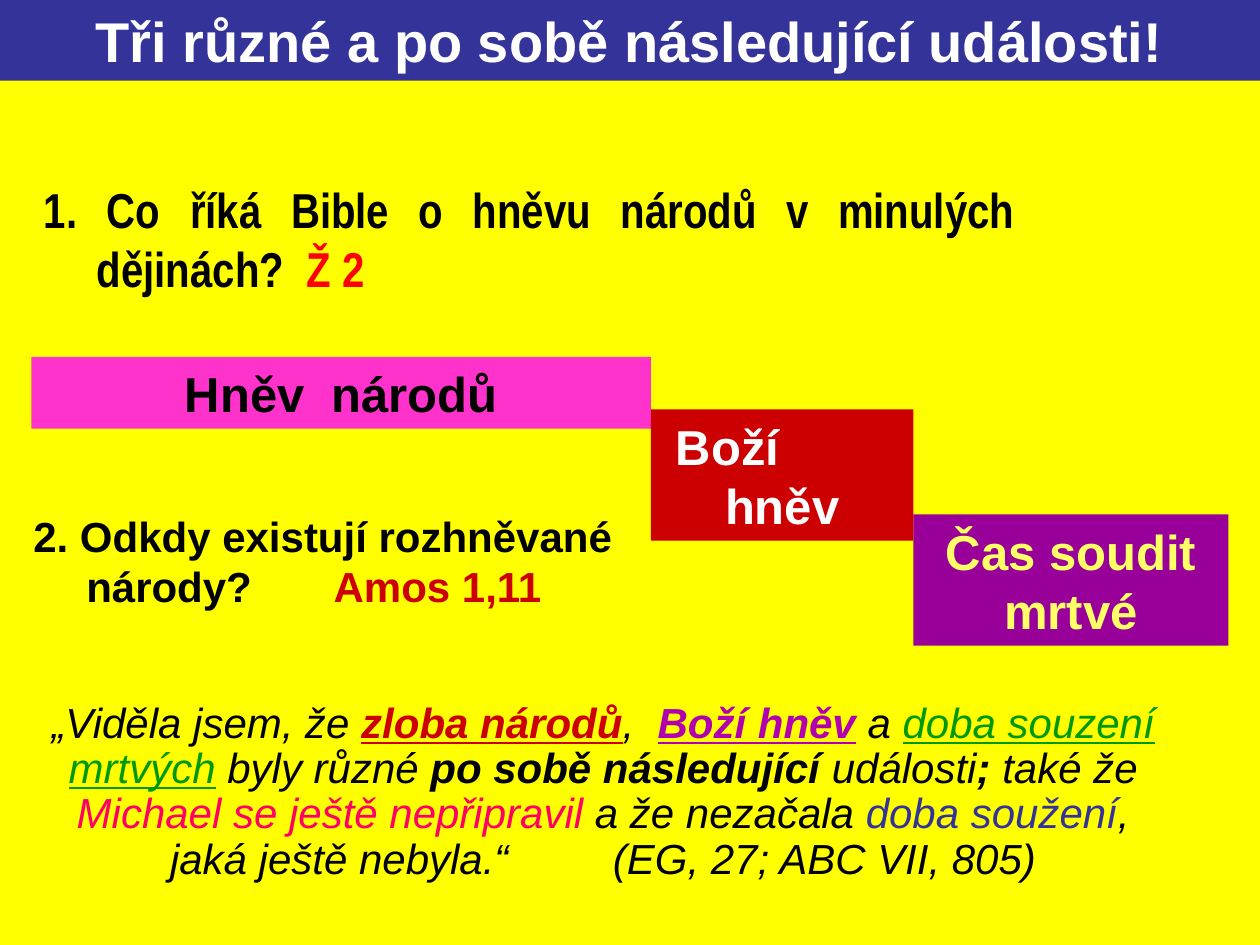
"""Build a slide on three successive events: stepped boxes, two questions and a quotation."""
from pptx import Presentation
from pptx.dml.color import RGBColor
from pptx.enum.shapes import MSO_SHAPE
from pptx.enum.text import MSO_ANCHOR, PP_ALIGN
from pptx.util import Inches, Pt

RECTANGLE = MSO_SHAPE.RECTANGLE
TOP, MIDDLE = MSO_ANCHOR.TOP, MSO_ANCHOR.MIDDLE
LEFT, CENTER, JUSTIFY = PP_ALIGN.LEFT, PP_ALIGN.CENTER, PP_ALIGN.JUSTIFY

BLACK = RGBColor(0x00, 0x00, 0x00)
WHITE = RGBColor(0xFF, 0xFF, 0xFF)
YELLOW = RGBColor(0xFF, 0xFF, 0x00)
PALE_YELLOW = RGBColor(0xFF, 0xFF, 0x66)
NAVY = RGBColor(0x33, 0x33, 0x99)
PINK = RGBColor(0xFF, 0x33, 0xCC)
ROSE = RGBColor(0xFF, 0x00, 0x66)
RED = RGBColor(0xFF, 0x00, 0x00)
DARK_RED = RGBColor(0xCC, 0x00, 0x00)
PURPLE = RGBColor(0x99, 0x00, 0x99)
VIOLET = RGBColor(0xB0, 0x00, 0xB0)
GREEN = RGBColor(0x00, 0x99, 0x00)

COLUMNS, ROWS = 120, 90

deck = Presentation()
deck.slide_width, deck.slide_height = Inches(10), Inches(7.5)
slide = deck.slides.add_slide(deck.slide_layouts[6])
slide.background.fill.solid()
slide.background.fill.fore_color.rgb = YELLOW


def place(column, row, columns, rows, fill=None):
    """Add a filled rectangle, or a text box if there is no fill, on the grid."""
    cell_width, cell_height = deck.slide_width / COLUMNS, deck.slide_height / ROWS
    area = [int(n) for n in (column * cell_width, row * cell_height,
                             columns * cell_width, rows * cell_height)]
    if fill is None:
        box = slide.shapes.add_textbox(*area)
    else:
        box = slide.shapes.add_shape(RECTANGLE, *area)
        box.shadow.inherit = False
        box.fill.solid()
        box.fill.fore_color.rgb = fill
        box.line.fill.background()
    box.text_frame.word_wrap = True
    box.text_frame.vertical_anchor = TOP if fill is None else MIDDLE
    return box.text_frame


def write(paragraph, runs, size, font="Arial", align=LEFT, bold=False, italic=False,
          margin=0, hanging=0, spacing=None):
    """Write (text, colour, marks) runs; marks are b bold, u underline, or a gap in points."""
    paragraph.alignment = align
    paragraph.line_spacing = spacing
    if margin:
        properties = paragraph._p.get_or_add_pPr()
        properties.set("marL", str(Inches(margin)))
        properties.set("indent", str(-Inches(hanging)))
    for text, color, marks in runs:
        run = paragraph.add_run()
        run.text = text
        run.font.name, run.font.size = font, Pt(size)
        run.font.color.rgb = color
        run.font.bold = bold or "b" in marks
        run.font.italic = italic
        run.font.underline = "u" in marks
        if marks.isdigit():
            run.font._element.set("spc", str(int(marks) * 100))


events = [
    (3, 34, 59, 6.84, PINK, BLACK, 28, [("Hněv  národů", CENTER, 0)]),
    (62, 39, 25, 12.5, DARK_RED, WHITE, 28, [("Boží", LEFT, 0.1), ("hněv", CENTER, 0)]),
    (87, 49, 30, 12.5, PURPLE, PALE_YELLOW, 28, [("Čas soudit mrtvé", CENTER, 0)]),
    (0, 0, COLUMNS, 7.68, NAVY, WHITE, 32,
     [("Tři různé a po sobě následující události!", CENTER, 0)]),
]
for column, row, columns, rows, fill, color, size, lines in events:
    frame = place(column, row, columns, rows, fill)
    for number, (text, align, margin) in enumerate(lines):
        paragraph = frame.add_paragraph() if number else frame.paragraphs[0]
        write(paragraph, [(text, color, "")], size, align=align, bold=True, margin=margin)

since_when = place(2, 48, 60, 11)
write(since_when.paragraphs[0], [
    ("2. Odkdy existují rozhněvané národy?", BLACK, ""),
    (" ", BLACK, "40"),
    ("Amos 1,11", DARK_RED, ""),
], 24, bold=True, margin=0.42, hanging=0.42)

what_bible_says = place(3, 16.5, 94.8, 18.6)
write(what_bible_says.paragraphs[0], [
    ("1. Co říká Bible o hněvu národů v minulých dějinách?  ", BLACK, ""),
    ("Ž 2", RED, ""),
], 28, font="Arial Narrow", align=JUSTIFY, bold=True, margin=0.42, hanging=0.42)

quotation = place(2, 66.25, 110.9, 18.5)
write(quotation.paragraphs[0], [
    ("„Viděla jsem, že ", BLACK, ""),
    ("zloba národů", DARK_RED, "bu"),
    (",  ", BLACK, ""),
    ("Boží hněv", VIOLET, "bu"),
    (" a ", BLACK, ""),
    ("doba souzení mrtvých", GREEN, "u"),
    (" byly různé ", BLACK, ""),
    ("po sobě následující", BLACK, "b"),
    (" události", BLACK, ""),
    (";", BLACK, "b"),
    (" také že ", BLACK, ""),
    ("Michael se ještě nepřipravil", ROSE, ""),
    (" a že nezačala ", BLACK, ""),
    ("doba soužení", NAVY, ""),
    (", jaká ještě nebyla.“", BLACK, ""),
    (" ", BLACK, "53"),
    ("(EG, 27; ABC VII, 805)", BLACK, ""),
], 24, align=CENTER, italic=True, spacing=0.9)

deck.save("out.pptx")
